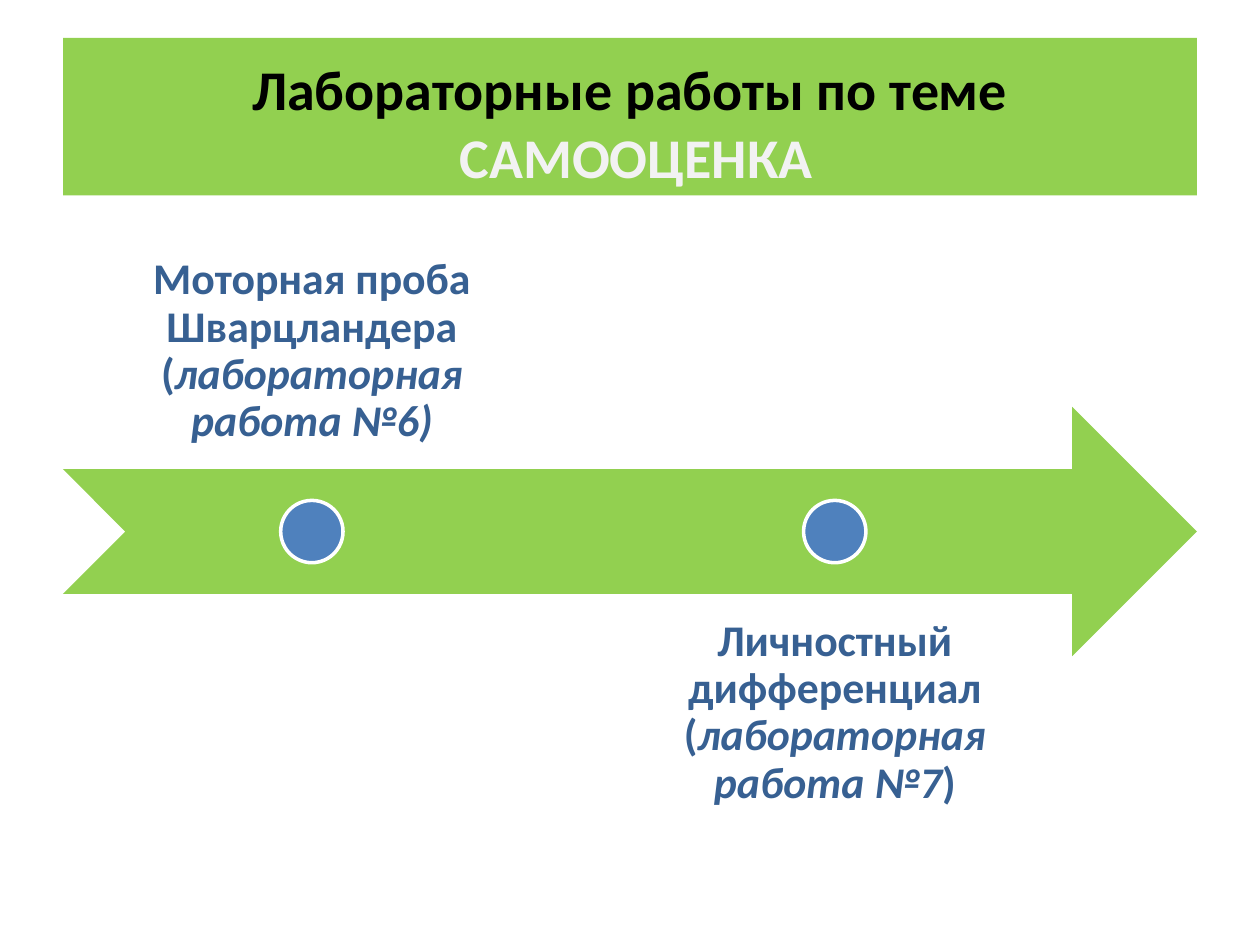
"""Build a slide that sets two laboratory works along an arrow."""
from pptx import Presentation
from pptx.dml.color import RGBColor
from pptx.enum.shapes import MSO_SHAPE
from pptx.enum.text import MSO_ANCHOR, MSO_AUTO_SIZE, PP_ALIGN
from pptx.util import Pt

COLORS = {
    "green": "92D050",
    "blue": "4F81BD",
    "navy": "376092",
    "black": "000000",
    "pale": "F2F2F2",
    "white": "FFFFFF",
}
LEFT, WIDTH = 36, 648
ARROW_TOP, ARROW_HEIGHT = 232.5, 142.5
LABEL_WIDTH, LABEL_STEP = 284.4, 298.8
LABEL_TOPS = (126, 339.75)
LABEL_ANCHORS = (MSO_ANCHOR.BOTTOM, MSO_ANCHOR.TOP)
DOT_SIZE = ARROW_HEIGHT / 4
LABELS = (
    (("Моторная проба Шварцландера (", False), ("лабораторная работа №6)", True)),
    (("Личностный дифференциал (", False), ("лабораторная работа №7", True), (")", False)),
)


def color(name):
    return RGBColor.from_string(COLORS[name])


def add_span(para, text, size, color_name, italic=False):
    span = para.add_run()
    span.text = text
    span.font.name = "Calibri"
    span.font.size = Pt(size)
    span.font.bold = True
    span.font.italic = italic
    span.font.color.rgb = color(color_name)


def format_title(title):
    title.left, title.top = Pt(LEFT), Pt(21.6)
    title.width, title.height = Pt(WIDTH), Pt(90)
    title.fill.solid()
    title.fill.fore_color.rgb = color("green")
    frame = title.text_frame
    frame.auto_size = MSO_AUTO_SIZE.NONE
    frame.vertical_anchor = MSO_ANCHOR.MIDDLE
    frame.margin_top = Pt(10)
    lines = (("Лабораторные работы по теме", "black"), (" САМООЦЕНКА", "pale"))
    for index, (text, color_name) in enumerate(lines):
        para = frame.add_paragraph() if index else frame.paragraphs[0]
        para.alignment = PP_ALIGN.CENTER
        add_span(para, text, 32, color_name)


def add_figure(page, kind, left, top, width, height, fill):
    figure = page.shapes.add_shape(kind, Pt(left), Pt(top), Pt(width), Pt(height))
    figure.shadow.inherit = False
    figure.fill.solid()
    figure.fill.fore_color.rgb = color(fill)
    figure.line.fill.background()
    return figure


def add_label(page, left, top, anchor, spans):
    box = page.shapes.add_textbox(Pt(left), Pt(top), Pt(LABEL_WIDTH), Pt(ARROW_HEIGHT))
    frame = box.text_frame
    frame.word_wrap = True
    frame.vertical_anchor = anchor
    frame.margin_left = frame.margin_right = Pt(13.68)
    frame.margin_top = frame.margin_bottom = Pt(13.68)
    para = frame.paragraphs[0]
    para.alignment = PP_ALIGN.CENTER
    para.line_spacing = 0.9
    for text, italic in spans:
        add_span(para, text, 25, "navy", italic)


def add_dot(page, center):
    top = ARROW_TOP + (ARROW_HEIGHT - DOT_SIZE) / 2
    dot = add_figure(page, MSO_SHAPE.OVAL, center - DOT_SIZE / 2, top,
                     DOT_SIZE, DOT_SIZE, "blue")
    dot.line.color.rgb = color("white")
    dot.line.width = Pt(2)


def main():
    deck = Presentation()
    deck.slide_width, deck.slide_height = Pt(720), Pt(540)
    page = deck.slides.add_slide(deck.slide_layouts[5])
    format_title(page.shapes.title)
    add_figure(page, MSO_SHAPE.NOTCHED_RIGHT_ARROW, LEFT, ARROW_TOP,
               WIDTH, ARROW_HEIGHT, "green")
    for index, (top, anchor, spans) in enumerate(zip(LABEL_TOPS, LABEL_ANCHORS, LABELS)):
        left = LEFT + index * LABEL_STEP
        add_label(page, left, top, anchor, spans)
        add_dot(page, left + LABEL_WIDTH / 2)
    deck.save("out.pptx")


if __name__ == "__main__":
    main()
